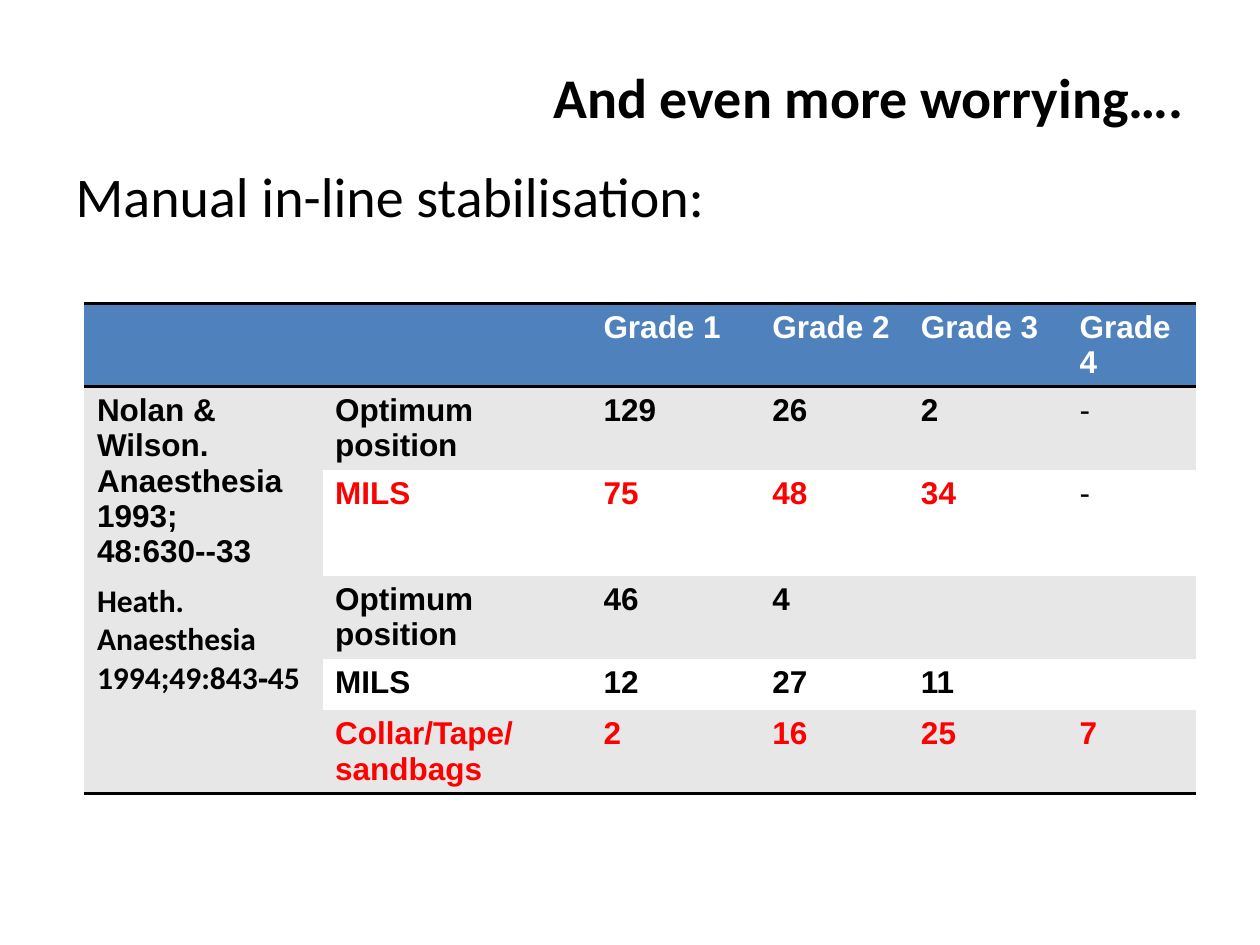
from dataclasses import dataclass

from lxml import etree
from pptx import Presentation
from pptx.dml.color import RGBColor
from pptx.enum import text
from pptx.oxml.ns import qn
from pptx.util import Inches, Pt


@dataclass(frozen=True)
class Theme:
    black: str = "000000"
    white: str = "FFFFFF"
    red: str = "FF0000"
    blue: str = "4F81BD"
    band: str = "E7E7E7"
    sans: str = "Calibri"
    grid: str = "Arial"
    head: int = 32
    cell: int = 18
    rule: int = 2


THEME = Theme()
PLAIN_TABLE = "{2D5ABB26-0587-4C30-8999-92F81FD0307C}"
COLS = [1.89, 2.13, 1.34, 1.18, 1.26, 1.02]
ROWS = [0.5, 0.5, 0.5, 0.33, 0.33, 0.33]
DATA = [
    ["", "", "Grade 1", "Grade 2", "Grade 3", "Grade 4"],
    ["Nolan & Wilson.\nAnaesthesia 1993;\n48:630-‐33",
     "Optimum position", "129", "26", "2", "-"],
    ["", "MILS", "75", "48", "34", "-"],
    ["Heath.\nAnaesthesia\n1994;49:843‐45", "Optimum position", "46", "4", "", ""],
    ["", "MILS", "12", "27", "11", ""],
    ["", "Collar/Tape/ sandbags", "2", "16", "25", "7"],
]
RED_ROWS = (2, 5)
STUDIES = [(1, 2), (3, 5)]  # first and last row of each study


def style(frame, size, face, color, bold=False):
    for para in frame.paragraphs:
        for run in para.runs:
            font = run.font
            font.size, font.name, font.bold = Pt(size), face, bold
            font.color.rgb = RGBColor.from_string(color)


def place(shape, left, top, width, height):
    shape.left, shape.top = Inches(left), Inches(top)
    shape.width, shape.height = Inches(width), Inches(height)


def add_title(slide, words):
    title = slide.shapes.title
    place(title, 0.5, 0.3, 9, 0.93)
    frame = title.text_frame
    frame.text = words
    frame.vertical_anchor = text.MSO_ANCHOR.MIDDLE
    frame.paragraphs[0].alignment = text.PP_ALIGN.RIGHT
    style(frame, THEME.head, THEME.sans, THEME.black, True)


def add_body(slide, words):
    body = slide.placeholders[1]
    place(body, 0.5, 1.23, 9, 5.47)
    frame = body.text_frame
    frame.text = words
    para = frame.paragraphs[0]
    props = para._p.get_or_add_pPr()
    props.set("marL", "0")
    props.set("indent", "0")
    etree.SubElement(props, qn("a:buNone"))
    para.space_before = Pt(0)
    style(frame, THEME.head, THEME.sans, THEME.black)


def add_rule(cell, side):
    """Draw a black border on one side; call it before the cell is filled."""
    props = cell._tc.get_or_add_tcPr()
    line = etree.SubElement(props, qn(f"a:ln{side}"), w=str(Pt(THEME.rule)))
    fill = etree.SubElement(line, qn("a:solidFill"))
    etree.SubElement(fill, qn("a:srgbClr"), val=THEME.black)


def fill_cell(cell, row, col, words):
    last = len(DATA) - 1
    sides = "TB" if row == 0 else ""
    if row == last or (col == 0 and row == STUDIES[-1][0]):
        sides = "B"
    for side in sides:
        add_rule(cell, side)

    if row == 0:
        fill, color = THEME.blue, THEME.white
    else:
        fill = THEME.band if row % 2 or col == 0 else THEME.white
        red = row in RED_ROWS and words != "-"
        color = THEME.red if red else THEME.black
    cell.fill.solid()
    cell.fill.fore_color.rgb = RGBColor.from_string(fill)

    if words:
        cell.text_frame.text = words
        face = THEME.sans if (row, col) == (3, 0) else THEME.grid
        style(cell.text_frame, THEME.cell, face, color, words != "-")


def add_grades(slide):
    frame = slide.shapes.add_table(
        len(ROWS), len(COLS), Inches(0.67), Inches(2.41),
        Inches(sum(COLS)), Inches(sum(ROWS)))
    table = frame.table
    table._tbl.tblPr.find(qn("a:tableStyleId")).text = PLAIN_TABLE
    table.horz_banding = False
    for col, width in zip(table.columns, COLS):
        col.width = Inches(width)
    for row, height in zip(table.rows, ROWS):
        row.height = Inches(height)
    for first, last in STUDIES:
        table.cell(first, 0).merge(table.cell(last, 0))
    for row, line in enumerate(DATA):
        for col, words in enumerate(line):
            fill_cell(table.cell(row, col), row, col, words)


def main():
    deck = Presentation()
    deck.slide_width, deck.slide_height = Inches(10), Inches(7.5)
    slide = deck.slides.add_slide(deck.slide_layouts[1])
    add_title(slide, "And even more worrying….")
    add_body(slide, "Manual in-line stabilisation:")
    add_grades(slide)
    deck.save("out.pptx")


if __name__ == "__main__":
    main()
